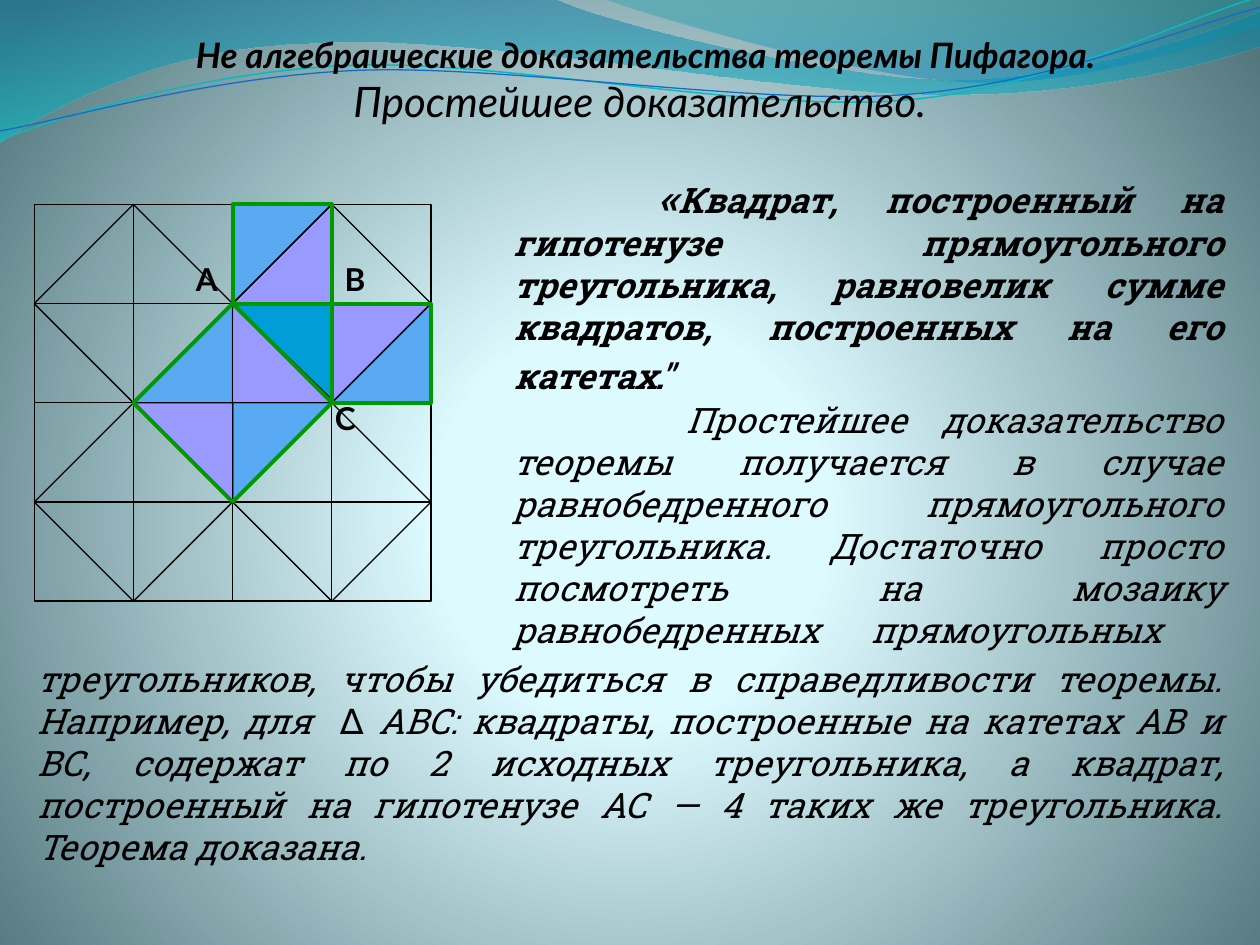
from dataclasses import dataclass
from typing import Optional

import lxml.etree
import pptx
import pptx.dml.color
import pptx.enum.shapes
import pptx.enum.text
import pptx.oxml
import pptx.oxml.ns
import pptx.util

Cm, Pt, qn = pptx.util.Cm, pptx.util.Pt, pptx.oxml.ns.qn
ALIGN = pptx.enum.text.PP_ALIGN
PRESET = pptx.enum.shapes.MSO_SHAPE

COLORS = {
    "black": "000000", "blue": "59AAF2", "violet": "9999FF", "core": "009DD9",
    "green": "009900", "teal line": "0AB8BF", "navy line": "0F6FC6",
    "glow": "DEFBFF", "pale": "DDFAFF", "edge": "52767C",
    "wave top": "0074A1", "wave bottom": "00C6CF",
    "crest top": "00A1A9", "crest bottom": "008BBF",
}
GRID_LEFT, GRID_TOP, CELL = 0.69, 4.12, 2.0
DOWNWARD = '<a:lin ang="5400000" scaled="0"/>'
RADIAL = ('<a:path path="circle"><a:fillToRect l="10000" t="110000" '
          'r="10000" b="100000"/></a:path>')


@dataclass
class Wave:
    """A curved outline; a step holds one point (line) or three (Bezier curve)."""
    start: tuple
    steps: list
    stops: Optional[list] = None
    line: Optional[str] = None
    weight: float = 0


@dataclass
class Triangle:
    column: int
    row: int
    rotation: int
    fill: Optional[str]
    line: str
    height: float = CELL


@dataclass
class Run:
    text: str
    format: dict
    tracking: float = 0


@dataclass
class Paragraph:
    runs: list
    align: ALIGN = ALIGN.JUSTIFY
    indent: float = 0


LATO = {"name": "Lato", "size": Pt(24), "bold": False, "italic": True}
SLAB = {**LATO, "name": "Roboto Slab", "size": Pt(20)}
LABEL = {"name": "Lato", "size": Pt(18), "bold": True}

WAVES = [
    Wave((0, 0), [[(11.18, -0.03)],
                  [(12.09, 0.43), (16.87, 1.6), (19.25, 1.6)],
                  [(21.67, 1.6), (24.33, 0.66), (25.4, 0.23)],
                  [(25.43, 0.91)],
                  [(24.97, 1.12), (22.1, 1.93), (18.95, 1.91)],
                  [(15.8, 1.91), (9.7, 0.71), (6.53, 0.86)],
                  [(3.28, 0.91), (1.17, 2.11), (-0.03, 2.87)]],
         stops=[(0, "wave top", 45), (100, "wave bottom", 55)]),
    Wave((12.17, -0.03), [[(12.93, 0.28), (17.32, 1.57), (19.53, 1.65)],
                          [(21.74, 1.75), (24.41, 0.81), (25.4, 0.53)],
                          [(25.4, 0)]],
         stops=[(0, "crest top", 30), (80, "crest bottom", 45)]),
    Wave((0, 2.82), [[(1.22, 2.36), (4.01, 1.45), (7.04, 1.32)],
                     [(10.03, 1.19), (15.06, 2.26), (18.11, 2.03)],
                     [(21.16, 1.8), (23.83, 0.38), (25.35, -0.05)]],
         line="teal line", weight=0.85),
    Wave((0, 2.64), [[(1.19, 2.44), (4.17, 1.55), (7.19, 1.42)],
                     [(10.24, 1.3), (15.16, 2.13), (18.21, 1.91)],
                     [(21.23, 1.7), (23.9, 0.53), (25.4, 0.15)]],
         line="navy line", weight=0.75),
]
TRIANGLES = [
    Triangle(1, 1, 270, "blue", "core"), Triangle(2, 0, 90, "blue", "core"),
    Triangle(2, 2, 90, "blue", "green"), Triangle(3, 1, 90, "violet", "black"),
    Triangle(2, 1, 0, "violet", "green"), Triangle(3, 1, 270, "blue", "core"),
    Triangle(2, 0, 270, "violet", "black"), Triangle(1, 2, 180, "violet", "black"),
    Triangle(2, 1, 180, "core", "black", 1.93), Triangle(3, 1, 270, None, "black"),
]
# Grid nodes as (column, row)
DIAGONALS = [((3, 0), (4, 1)), ((1, 0), (0, 1)), ((1, 2), (0, 3)), ((0, 3), (1, 4)),
             ((2, 3), (1, 4)), ((0, 1), (1, 2)), ((1, 0), (2, 1))]
MOSAIC_OUTLINES = [[(2, 3), (3, 4), (4, 3), (3, 2)], [(3, 0), (1, 2), (2, 3), (3, 2)]]
LEG_SQUARES = [(2, 1), (2, 0), (3, 0), (3, 1), (4, 1), (4, 2), (3, 2), (3, 1), (2, 1)]
HYPOTENUSE_SQUARE = [(2, 1), (1, 2), (2, 3), (3, 2), (2, 1)]
VERTEX_LABELS = [("А", 3.7, 5.11), ("С", 6.5, 7.92), ("В", 6.7, 5.11)]

TITLE = [
    Paragraph([Run("Не алгебраические доказательства теоремы Пифагора.",
                   {**LATO, "size": Pt(20), "bold": True})], ALIGN.CENTER, indent=0.24),
    Paragraph([Run("Простейшее доказательство.", LATO)], ALIGN.CENTER),
]
THEOREM = [
    Paragraph([
        Run("«", {**SLAB, "size": Pt(24), "bold": True}),
        Run("Квадрат, построенный на гипотенузе прямоугольного треугольника, "
            "равновелик сумме квадратов, построенных на его катетах.\"",
            {**SLAB, "bold": True}),
        Run(" ", {**SLAB, "size": Pt(24), "bold": True})], indent=2.92),
    Paragraph([
        Run("Простейшее доказательство теоремы получается в случае равнобедренного "
            "прямоугольного треугольника. Достаточно просто посмотреть на мозаику "
            "равнобедренных", SLAB),
        Run(" ", SLAB, tracking=24.5),
        Run("прямоугольных", SLAB)], indent=3.48),
]
PROOF = [Paragraph([
    Run("треугольников, чтобы убедиться в справедливости теоремы. Например, для", SLAB),
    Run(" ", SLAB, tracking=8),
    Run("∆ ABC: квадраты, построенные на катетах АВ и ВС, содержат по 2 исходных "
        "треугольника, а квадрат, построенный на гипотенузе АС — 4 таких же "
        "треугольника. Теорема доказана.", SLAB)])]


def rgb(color: str) -> pptx.dml.color.RGBColor:
    return pptx.dml.color.RGBColor.from_string(COLORS[color])


def node(column: int, row: int) -> tuple:
    return Cm(GRID_LEFT + column * CELL), Cm(GRID_TOP + row * CELL)


def set_gradient(owner, stops: list, direction: str) -> None:
    """Replace the owner's solid fill with a gradient of (position, colour, opacity)."""
    marks = "".join(
        f'<a:gs pos="{position * 1000}"><a:srgbClr val="{COLORS[color]}">'
        f'<a:alpha val="{opacity * 1000}"/></a:srgbClr></a:gs>'
        for position, color, opacity in stops)
    gradient = pptx.oxml.parse_xml(
        f'<a:gradFill {pptx.oxml.ns.nsdecls("a")} rotWithShape="1">'
        f'<a:gsLst>{marks}</a:gsLst>{direction}</a:gradFill>')
    owner.replace(owner.find(qn("a:solidFill")), gradient)


def style(shape, fill: Optional[str], line: Optional[str], weight: float = 0.75) -> None:
    shape.shadow.inherit = False
    for part, color in ((shape.fill, fill), (shape.line.fill, line)):
        if color:
            part.solid()
            part.fore_color.rgb = rgb(color)
        else:
            part.background()
    if line:
        shape.line.width = Pt(weight)


def draw_outline(slide, points: list, closed: bool = False):
    builder = slide.shapes.build_freeform(*points[0])
    builder.add_line_segments(points[1:], close=closed)
    return builder.convert_to_shape()


def bend(shape, steps: list) -> None:
    """Merge the three segments of each three-point step into one Bezier curve."""
    segments = iter(shape._element.findall(".//" + qn("a:lnTo")))
    for step in steps:
        merged = [next(segments) for _ in step]
        if len(step) == 3:
            curve = lxml.etree.Element(qn("a:cubicBezTo"))
            merged[0].addprevious(curve)
            for segment in merged:
                curve.append(segment[0])
                segment.getparent().remove(segment)


def draw_wave(slide, wave: Wave) -> None:
    points = [wave.start] + [point for step in wave.steps for point in step]
    shape = draw_outline(slide, [(Cm(x), Cm(y)) for x, y in points], bool(wave.stops))
    bend(shape, wave.steps)
    style(shape, wave.stops[0][1] if wave.stops else None, wave.line, wave.weight)
    if wave.stops:
        set_gradient(shape._element.spPr, wave.stops, DOWNWARD)


def draw_cell(slide, preset, column: int, row: int, fill: Optional[str], line: str,
              height: float = CELL):
    shape = slide.shapes.add_shape(preset, *node(column, row), Cm(CELL), Cm(height))
    style(shape, fill, line)
    return shape


def draw_diagonal(slide, start: tuple, end: tuple) -> None:
    diagonal = slide.shapes.add_connector(
        pptx.enum.shapes.MSO_CONNECTOR.STRAIGHT, *node(*start), *node(*end))
    diagonal.line.color.rgb = rgb("black")
    diagonal.line.width = Pt(0.75)
    lxml.etree.SubElement(diagonal._element.spPr, qn("a:effectLst"))


def write(shape, box: tuple, paragraphs: list) -> None:
    """Place the text shape at box (cm) and fill it with formatted paragraphs."""
    for side, length in zip(("left", "top", "width", "height"), box):
        setattr(shape, side, Cm(length))
    frame = shape.text_frame
    frame_format = {"word_wrap": True, "auto_size": pptx.enum.text.MSO_AUTO_SIZE.NONE,
                    "vertical_anchor": pptx.enum.text.MSO_ANCHOR.TOP}
    for name, value in frame_format.items():
        setattr(frame, name, value)
    for index, content in enumerate(paragraphs):
        paragraph = frame.add_paragraph() if index else frame.paragraphs[0]
        spacing = {"alignment": content.align, "space_before": Pt(0), "space_after": Pt(0)}
        for name, value in spacing.items():
            setattr(paragraph, name, value)
        properties = paragraph._p.get_or_add_pPr()
        properties.set("marL", "0")
        properties.set("indent", str(Cm(content.indent)))
        lxml.etree.SubElement(properties, qn("a:buNone"))
        for part in content.runs:
            run = paragraph.add_run()
            run.text = part.text
            run.font.color.rgb = rgb("black")
            for name, value in part.format.items():
                setattr(run.font, name, value)
            if part.tracking:
                run._r.get_or_add_rPr().set("spc", str(int(part.tracking * 100)))


def main() -> None:
    deck = pptx.Presentation()
    deck.slide_width, deck.slide_height = Cm(25.4), Cm(19.05)
    slide = deck.slides.add_slide(deck.slide_layouts.get_by_name("Two Content"))
    slide.background.fill.solid()
    set_gradient(slide._element.xpath(".//p:bgPr")[0],
                 [(0, "glow", 100), (25, "pale", 100), (100, "edge", 100)], RADIAL)
    title, theorem, proof = list(slide.placeholders)[:3]
    for wave in WAVES:
        draw_wave(slide, wave)
    for holder, box, paragraphs in ((title, (0.9, 0.54, 24, 3), TITLE),
                                    (theorem, (10.1, 3.33, 14.81, 10.01), THEOREM),
                                    (proof, (0.5, 13.13, 24.41, 5.56), PROOF)):
        write(holder, box, paragraphs)
        slide.shapes._spTree.append(holder._element)  # text lies above the waves
    for piece in TRIANGLES:
        triangle = draw_cell(slide, PRESET.RIGHT_TRIANGLE, piece.column, piece.row,
                             piece.fill, piece.line, piece.height)
        triangle.rotation = piece.rotation
    for index in range(16):
        draw_cell(slide, PRESET.RECTANGLE, index % 4, index // 4, None, "black")
    for letter, left, top in VERTEX_LABELS:
        write(slide.shapes.add_textbox(0, 0, 0, 0), (left, top, 0.94, 1.02),
              [Paragraph([Run(letter, LABEL)])])
    for start, end in DIAGONALS:
        draw_diagonal(slide, start, end)
    for outline in MOSAIC_OUTLINES:
        style(draw_outline(slide, [node(*p) for p in outline]), None, "black")
    for square in (LEG_SQUARES, HYPOTENUSE_SQUARE):
        style(draw_outline(slide, [node(*p) for p in square], True), None, "green", 2.25)
    deck.save("out.pptx")


if __name__ == "__main__":
    main()
